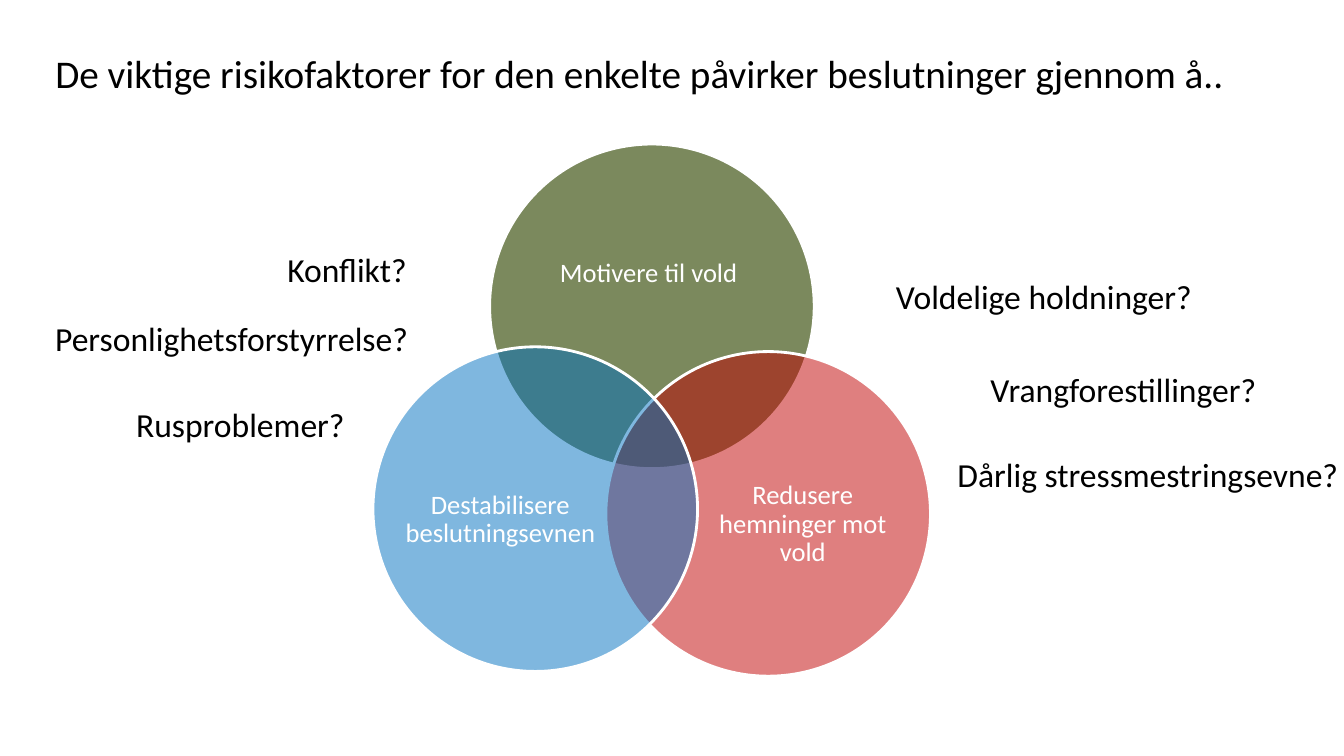
"""Build a slide with a three-circle Venn diagram of risk factors for violence."""
from lxml.etree import SubElement
from pptx import Presentation
from pptx.dml.color import RGBColor
from pptx.enum.shapes import MSO_SHAPE
from pptx.enum.text import MSO_ANCHOR, MSO_AUTO_SIZE, PP_ALIGN
from pptx.oxml.ns import qn
from pptx.util import Cm, Pt

TITLE = "De viktige risikofaktorer for den enkelte påvirker beslutninger gjennom å.."
DIAMETER = 8.18
CIRCLES = [
    ("Motivere til vold", "4F6228", 75, (12.34, 3.63), (13.35, 5.05, 5.99, 3.68)),
    ("Redusere hemninger mot vold", "C00000", 50, (15.27, 8.86), (17.78, 10.97, 4.9, 4.5)),
    ("Destabilisere beslutningsevnen", "0070C0", 50, (9.4, 8.74), (10.16, 10.85, 4.9, 4.5)),
]
FACTOR_HEIGHT = 1.27
FACTORS = [
    ("Konflikt?", 6.99, 6.14, 4.01),
    ("Personlighetsforstyrrelse?", 1.14, 7.89, 9.5),
    ("Rusproblemer?", 3.18, 10.06, 5.82),
    ("Voldelige holdninger?", 22.33, 6.83, 8.05),
    ("Vrangforestillinger?", 24.71, 9.16, 7.7),
    ("Dårlig stressmestringsevne?", 23.88, 11.32, 10.21),
]


def rgb(value):
    return RGBColor.from_string(value)


def write(sp, text, size, color="000000", align=PP_ALIGN.LEFT):
    tf = sp.text_frame
    tf.text = text
    p = tf.paragraphs[0]
    p.alignment = align
    p.font.name = "Calibri"
    p.font.size = Pt(size)
    p.font.color.rgb = rgb(color)
    return tf


def add_circle(s, color, opacity, left, top):
    sp = s.shapes.add_shape(MSO_SHAPE.OVAL, Cm(left), Cm(top), Cm(DIAMETER), Cm(DIAMETER))
    sp.shadow.inherit = False
    sp.fill.solid()
    sp.fill.fore_color.rgb = rgb(color)
    fill = sp.element.spPr.find(qn("a:solidFill"))
    SubElement(fill[0], qn("a:alpha"), val=str(opacity * 1000))
    sp.line.color.rgb = rgb("FFFFFF")
    sp.line.width = Pt(2)


def add_label(s, text, box):
    sp = s.shapes.add_textbox(*map(Cm, box))
    tf = write(sp, text, 19, "FFFFFF", PP_ALIGN.CENTER)
    tf.word_wrap = True
    tf.vertical_anchor = MSO_ANCHOR.MIDDLE
    tf.margin_left = tf.margin_top = tf.margin_right = tf.margin_bottom = 0
    tf.paragraphs[0].line_spacing = 0.9


def add_factor(s, text, left, top, width):
    sp = s.shapes.add_textbox(Cm(left), Cm(top), Cm(width), Cm(FACTOR_HEIGHT))
    tf = write(sp, text, 24)
    tf.word_wrap = True
    tf.auto_size = MSO_AUTO_SIZE.NONE


def main():
    prs = Presentation()
    prs.slide_width, prs.slide_height = Cm(33.87), Cm(19.05)
    s = prs.slides.add_slide(prs.slide_layouts[5])

    title = s.shapes.title
    title.left, title.top, title.width, title.height = map(Cm, (1.14, 1.12, 30.28, 1.45))
    tf = write(title, TITLE, 28)
    tf.vertical_anchor = MSO_ANCHOR.TOP
    tf.auto_size = MSO_AUTO_SIZE.NONE

    for text, color, opacity, corner, box in CIRCLES:
        add_circle(s, color, opacity, *corner)
        add_label(s, text, box)
    for factor in FACTORS:
        add_factor(s, *factor)

    prs.save("out.pptx")


if __name__ == "__main__":
    main()
